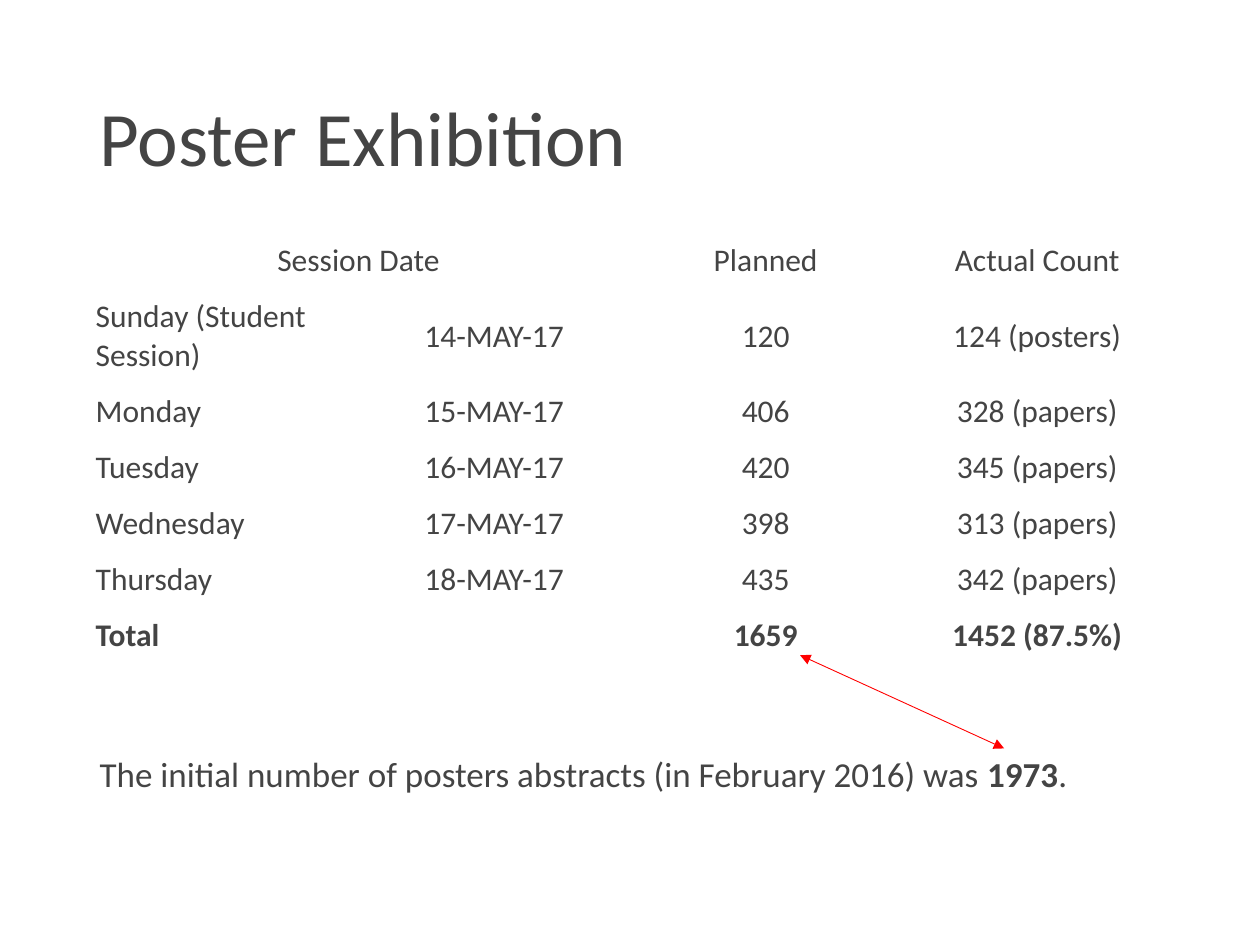
from pptx import Presentation
from pptx.dml.color import RGBColor
from pptx.enum.shapes import MSO_CONNECTOR
from pptx.enum.text import MSO_ANCHOR as Anchor, MSO_AUTO_SIZE as AutoSize, PP_ALIGN as Align
from pptx.oxml.ns import qn
from pptx.util import Inches, Pt
from lxml.etree import SubElement

WIDTH, HEIGHT = 10, 7.5
LEFT, CONTENT_WIDTH = 0.69, 8.62
TABLE_TOP, ROW_HEIGHT, TALL_ROW_HEIGHT = 1.85, 0.44, 0.75
CELL_MARGIN = 0.07
FONT, TEXT_COLOR, ARROW_COLOR = "Calibri", "444444", "FF0000"

ROWS = [
    ("Session Date", "", "Planned", "Actual Count"),
    ("Sunday (Student Session)", "14-MAY-17", "120", "124 (posters)"),
    ("Monday", "15-MAY-17", "406", "328 (papers)"),
    ("Tuesday", "16-MAY-17", "420", "345 (papers)"),
    ("Wednesday", "17-MAY-17", "398", "313 (papers)"),
    ("Thursday", "18-MAY-17", "435", "342 (papers)"),
    ("Total", "", "1659", "1452 (87.5%)"),
]


def color(value):
    return RGBColor.from_string(value)


def add_text(paragraph, text, size=18, bold=False, align=Align.LEFT, spacing=None):
    paragraph.alignment = align
    if spacing:
        paragraph.line_spacing = spacing
    run = paragraph.add_run()
    run.text = text
    run.font.name = FONT
    run.font.size = Pt(size)
    run.font.bold = bold
    run.font.color.rgb = color(TEXT_COLOR)


def place(shape, top, height):
    shape.left, shape.top = Inches(LEFT), Inches(top)
    shape.width, shape.height = Inches(CONTENT_WIDTH), Inches(height)


def fill_title(shape, text):
    place(shape, 0.4, 1.45)
    frame = shape.text_frame
    frame.auto_size = AutoSize.NONE
    frame.vertical_anchor = Anchor.MIDDLE
    add_text(frame.paragraphs[0], text, size=44, spacing=0.9)


def fill_body(shape, parts):
    place(shape, 2, 4.76)
    frame = shape.text_frame
    frame.auto_size = AutoSize.NONE
    frame.vertical_anchor = Anchor.BOTTOM
    frame.margin_bottom = Inches(0.45)
    paragraph = frame.paragraphs[0]
    properties = paragraph._p.get_or_add_pPr()
    properties.set("marL", "0")
    properties.set("indent", "0")
    SubElement(properties, qn("a:buNone"))
    paragraph.space_before = Pt(0)
    for text, bold in parts:
        add_text(paragraph, text, size=20, bold=bold, spacing=0.9)


def fill_cell(cell, text, bold, align):
    cell.fill.background()
    cell.vertical_anchor = Anchor.MIDDLE
    cell.margin_left = cell.margin_right = Inches(CELL_MARGIN)
    cell.margin_top = cell.margin_bottom = Inches(CELL_MARGIN)
    if text:
        add_text(cell.text_frame.paragraphs[0], text, bold=bold, align=align)


def add_session_table(slide, rows):
    heights = [TALL_ROW_HEIGHT if index == 1 else ROW_HEIGHT for index in range(len(rows))]
    frame = slide.shapes.add_table(
        len(rows), len(rows[0]), Inches(LEFT), Inches(TABLE_TOP),
        Inches(CONTENT_WIDTH), Inches(sum(heights)))
    table = frame.table
    table.first_row = table.horz_banding = False
    last = len(rows) - 1
    for row_index, (values, height) in enumerate(zip(rows, heights)):
        table.rows[row_index].height = Inches(height)
        for column_index, value in enumerate(values):
            align = Align.LEFT if column_index == 0 and row_index > 0 else Align.CENTER
            fill_cell(table.cell(row_index, column_index), value, row_index == last, align)
    for row_index in (0, last):
        table.cell(row_index, 0).merge(table.cell(row_index, 1))


def add_double_arrow(slide, start, end):
    points = [Inches(value) for value in (*start, *end)]
    arrow = slide.shapes.add_connector(MSO_CONNECTOR.STRAIGHT, *points)
    arrow.line.color.rgb = color(ARROW_COLOR)
    arrow.line.width = Pt(0.5)
    line = arrow.line._get_or_add_ln()
    for tag in ("a:headEnd", "a:tailEnd"):
        SubElement(line, qn(tag)).set("type", "triangle")
    SubElement(arrow._element.spPr, qn("a:effectLst"))


def main():
    presentation = Presentation()
    presentation.slide_width, presentation.slide_height = Inches(WIDTH), Inches(HEIGHT)
    slide = presentation.slides.add_slide(presentation.slide_layouts[1])
    fill_title(slide.shapes.title, "Poster Exhibition")
    fill_body(slide.placeholders[1], [
        ("The initial number of posters abstracts (in February 2016) was ", False),
        ("1973", True),
        (".", False),
    ])
    add_session_table(slide, ROWS)
    add_double_arrow(slide, (6.35, 5.2), (7.97, 5.94))
    presentation.save("out.pptx")


if __name__ == "__main__":
    main()
